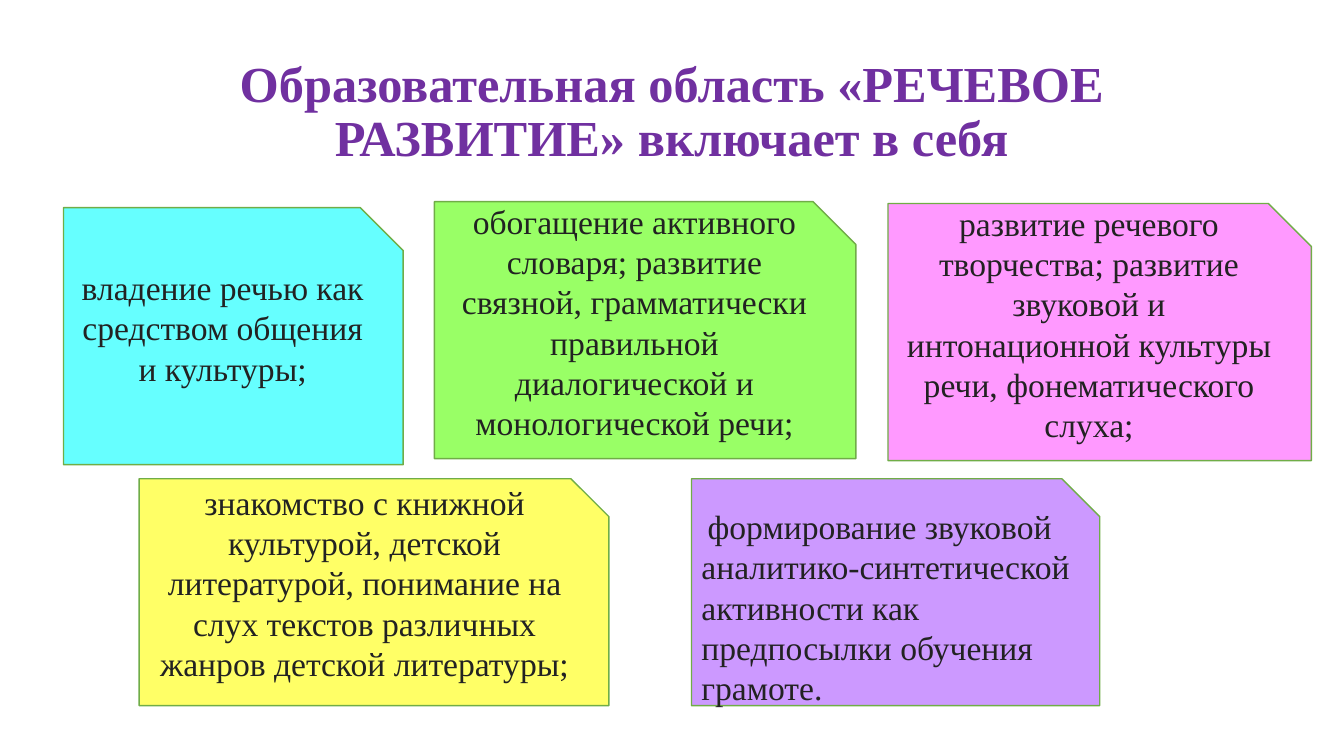
from pptx import Presentation
from pptx import util as u
from pptx.dml.color import RGBColor
from pptx.enum import shapes, text

FONT = "Times New Roman"
TOP_H, BOTTOM_H = 183.6, 162
BOTTOM_Y = 342
INSET = 3.6
LINE_H = 27.6  # one line of 24 pt text


def color(value):
    return RGBColor.from_string(value)


def put_text(tf, words, size=24, fill="222222", bold=False,
             align=text.PP_ALIGN.CENTER, spacing=1.0, indent=0,
             top=INSET, bottom=INSET):
    tf.word_wrap = True
    tf.vertical_anchor = text.MSO_ANCHOR.MIDDLE
    tf.margin_top, tf.margin_bottom = u.Pt(top), u.Pt(bottom)
    p = tf.paragraphs[0]
    p.alignment = align
    p.line_spacing = spacing
    if indent:
        p._p.get_or_add_pPr().set("indent", str(u.Pt(indent)))
    r = p.add_run()
    r.text = words
    r.font.name, r.font.size, r.font.bold = FONT, u.Pt(size), bold
    r.font.color.rgb = color(fill)


def add_title(s, box, words):
    sp = s.shapes.add_textbox(*map(u.Pt, box))
    put_text(sp.text_frame, words, size=36, fill="7030A0", bold=True, spacing=0.9)


def add_card(s, box, fill, words, **fmt):
    sp = s.shapes.add_shape(shapes.MSO_SHAPE.SNIP_1_RECTANGLE, *map(u.Pt, box))
    sp.shadow.inherit = False
    sp.fill.solid()
    sp.fill.fore_color.rgb = color(fill)
    sp.line.color.rgb = color("70AD47")
    sp.line.width = u.Pt(1)
    put_text(sp.text_frame, words, **fmt)


# Centred cards: box, fill, wording
CARDS = [
    ((45.4, 148.3, 242.6, TOP_H), "66FFFF",
     "владение речью как средством общения и культуры;"),
    ((310.3, 144, 301, TOP_H), "99FF66",
     "обогащение активного словаря; развитие связной, грамматически "
     "правильной диалогической и монологической речи;"),
    ((634.3, 145.4, 302.4, TOP_H), "FF99FF",
     "развитие речевого творчества; развитие звуковой и интонационной "
     "культуры речи, фонематического слуха;"),
    ((99.4, BOTTOM_Y, 335.5, BOTTOM_H), "FFFF66",
     "знакомство с книжной культурой, детской литературой, понимание на "
     "слух текстов различных жанров детской литературы;"),
]


def main():
    prs = Presentation()
    prs.slide_width, prs.slide_height = u.Pt(960), u.Pt(540)
    s = prs.slides.add_slide(prs.slide_layouts[6])

    # Heading
    add_title(s, (66, 28.8, 828, 104.4),
              "Образовательная область «РЕЧЕВОЕ РАЗВИТИЕ» включает в себя")

    # Centred cards, text raised by half a line
    for box, fill, words in CARDS:
        add_card(s, box, fill, words, bottom=INSET + LINE_H)

    # Left-aligned closing card
    add_card(s, (493.9, BOTTOM_Y, 291.6, BOTTOM_H), "CC99FF",
             "формирование звуковой аналитико-синтетической активности как "
             "предпосылки обучения грамоте.",
             align=text.PP_ALIGN.LEFT, indent=4.5, top=INSET + 7)

    prs.save("out.pptx")


if __name__ == "__main__":
    main()
